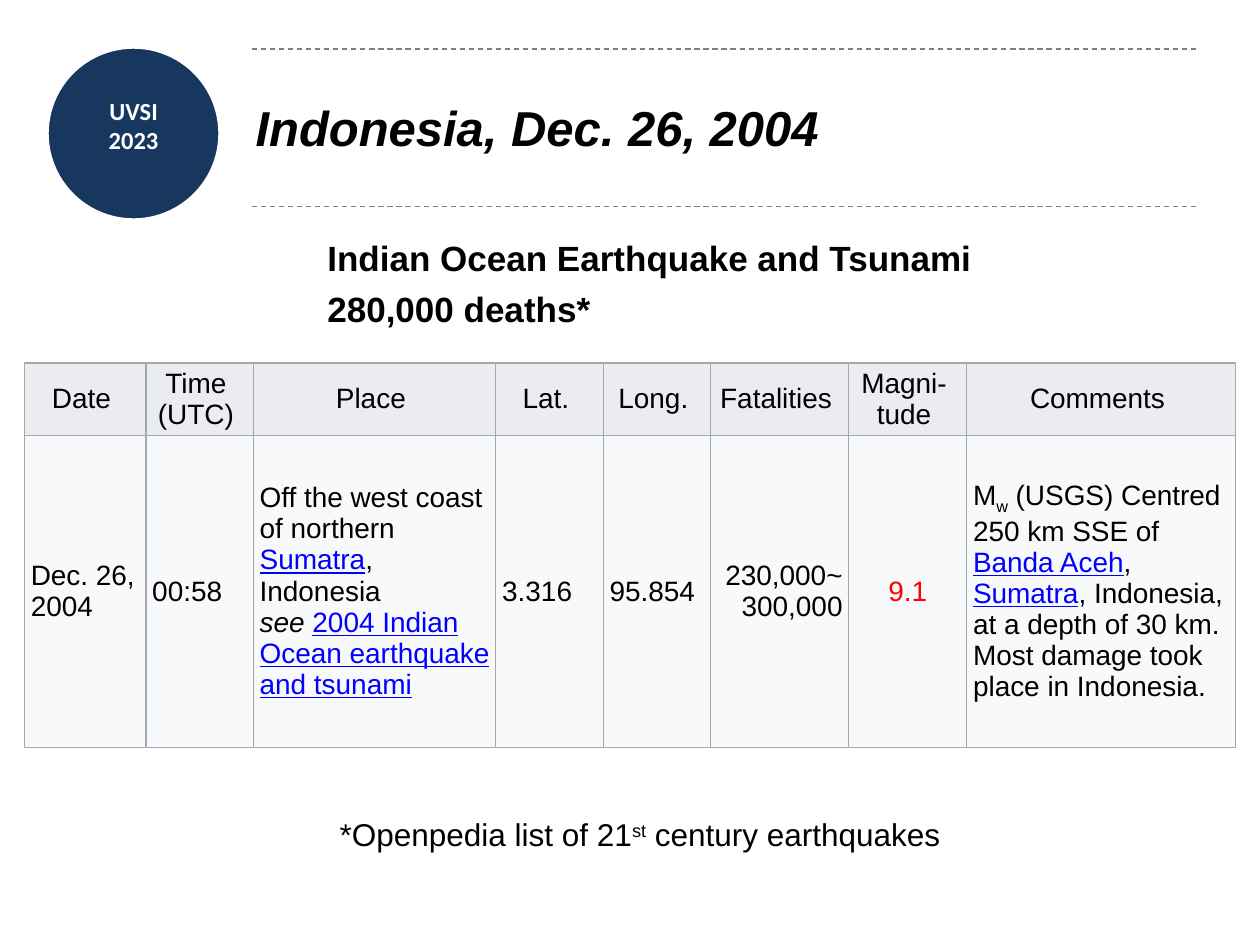
import pptx
import pptx.dml.color
import pptx.enum.dml
import pptx.enum.shapes
import pptx.enum.text
import pptx.oxml
import pptx.oxml.ns
import pptx.util

Pt = pptx.util.Pt
ALIGN = pptx.enum.text.PP_ALIGN
MIDDLE = pptx.enum.text.MSO_ANCHOR.MIDDLE

BLACK, WHITE, LINK_BLUE, RED = "000000", "FFFFFF", "0000FF", "FF0000"
NAVY, RULE_GRAY = "17375E", "808080"
HEADER_FILL, BODY_FILL, BORDER = "EAECF0", "F8F9FA", "A2A9B1"

LINK = {"color": LINK_BLUE, "underline": True}
COLUMN_WIDTHS = [69.4, 61.4, 138.6, 61.4, 61.4, 78.9, 67.4, 153.7]
ROW_HEIGHTS = [38.9, 178.6]
HEADERS = ["Date", "Time (UTC)", "Place", "Lat.", "Long.", "Fatalities", "Magni-tude", "Comments"]
# Each entry: alignment and runs of (text, format).
EARTHQUAKE = [
    (ALIGN.LEFT, [("Dec. 26, 2004", {})]),
    (ALIGN.LEFT, [("00:58", {})]),
    (ALIGN.LEFT, [
        ("Off the west coast of northern ", {}), ("Sumatra", LINK), (", Indonesia\n", {}),
        ("see ", {"italic": True}), ("2004 Indian Ocean earthquake and tsunami", LINK),
    ]),
    (ALIGN.LEFT, [("3.316", {})]),
    (ALIGN.LEFT, [("95.854", {})]),
    (ALIGN.RIGHT, [("230,000~\n300,000", {})]),
    (ALIGN.CENTER, [("9.1", {"color": RED})]),
    (ALIGN.LEFT, [
        ("M", {}), ("w", {"baseline": -25}), (" (USGS) Centred 250 km SSE of ", {}),
        ("Banda Aceh", LINK), (", ", {}), ("Sumatra", LINK),
        (", Indonesia, at a depth of 30 km. Most damage took place in Indonesia.", {}),
    ]),
]


def rgb(hex_color):
    return pptx.dml.color.RGBColor.from_string(hex_color)


def format_run(run, size, color=BLACK, font="Arial", bold=False, italic=False,
               underline=False, baseline=0):
    run.font.size, run.font.name = Pt(size), font
    run.font.bold, run.font.italic, run.font.underline = bold, italic, underline
    run.font.color.rgb = rgb(color)
    if baseline:
        run.font._element.set("baseline", str(baseline * 1000))


def add_runs(paragraph, runs, size):
    """Append (text, format) runs, turning newlines into line breaks."""
    for text, style in runs:
        for index, piece in enumerate(text.split("\n")):
            if index:
                paragraph.add_line_break()
            if piece:
                run = paragraph.add_run()
                run.text = piece
                format_run(run, size, **style)


def add_text_box(slide, left, top, width, height):
    frame = slide.shapes.add_textbox(Pt(left), Pt(top), Pt(width), Pt(height)).text_frame
    frame.word_wrap = True
    return frame


def add_text(slide, box, text, size, align=ALIGN.LEFT, space_before=0, **style):
    frame = add_text_box(slide, *box)
    frame.text = text
    for paragraph in frame.paragraphs:
        paragraph.alignment = align
        paragraph.space_before = Pt(space_before)
        for run in paragraph.runs:
            format_run(run, size, **style)
    return frame


def add_badge(slide):
    disc = slide.shapes.add_shape(pptx.enum.shapes.MSO_SHAPE.OVAL, Pt(26.6), Pt(26.6), Pt(99.4), Pt(99.4))
    disc.shadow.inherit = False
    disc.fill.solid()
    disc.fill.fore_color.rgb = rgb(NAVY)
    disc.line.color.rgb = rgb(WHITE)
    disc.line.width = Pt(2.5)
    label = add_text(slide, (31, 54.7, 90.7, 33.8), "UVSI\n2023", 14, ALIGN.CENTER,
                     color=WHITE, font="Calibri", bold=True)
    label.margin_left = label.margin_right = label.margin_top = label.margin_bottom = 0


def add_dashed_rule(slide, y):
    rule = slide.shapes.add_connector(pptx.enum.shapes.MSO_CONNECTOR.STRAIGHT, Pt(144), Pt(y), Pt(684), Pt(y))
    rule.line.color.rgb = rgb(RULE_GRAY)
    rule.line.width = Pt(0.75)
    rule.line.dash_style = pptx.enum.dml.MSO_LINE.DASH
    rule._element.spPr.append(pptx.oxml.parse_xml(
        f"<a:effectLst {pptx.oxml.ns.nsdecls('a')}/>"))


def set_borders(cell):
    properties = cell._tc.get_or_add_tcPr()
    for index, side in enumerate(("lnL", "lnR", "lnT", "lnB")):
        properties.insert(index, pptx.oxml.parse_xml(
            f'<a:{side} {pptx.oxml.ns.nsdecls("a")} w="{Pt(0.75)}">'
            f'<a:solidFill><a:srgbClr val="{BORDER}"/></a:solidFill></a:{side}>'))


def fill_cell(cell, runs, align, fill, right_margin):
    cell.fill.solid()
    cell.fill.fore_color.rgb = rgb(fill)
    set_borders(cell)
    cell.vertical_anchor = MIDDLE
    cell.margin_left, cell.margin_right = Pt(3.6), Pt(right_margin)
    cell.margin_top = cell.margin_bottom = Pt(1.44)
    paragraph = cell.text_frame.paragraphs[0]
    paragraph.alignment = align
    add_runs(paragraph, runs, 16)


def add_earthquake_table(slide):
    table = slide.shapes.add_table(
        len(ROW_HEIGHTS), len(COLUMN_WIDTHS), Pt(14), Pt(207.4),
        Pt(sum(COLUMN_WIDTHS)), Pt(sum(ROW_HEIGHTS))).table
    for column, width in zip(table.columns, COLUMN_WIDTHS):
        column.width = Pt(width)
    for row, height in zip(table.rows, ROW_HEIGHTS):
        row.height = Pt(height)
    for index, (header, (align, runs)) in enumerate(zip(HEADERS, EARTHQUAKE)):
        fill_cell(table.cell(0, index), [(header, {})], ALIGN.CENTER, HEADER_FILL, 7.9)
        fill_cell(table.cell(1, index), runs, align, BODY_FILL, 3.6)


def add_footnote(slide):
    paragraph = add_text_box(slide, 54, 462.2, 623.5, 28.8).paragraphs[0]
    paragraph.alignment = ALIGN.CENTER
    add_runs(paragraph, [("*Openpedia list of 21", {}), ("st", {"baseline": 30}),
                         (" century earthquakes", {})], 18)


def main():
    presentation = pptx.Presentation()
    presentation.slide_width, presentation.slide_height = Pt(720), Pt(540)
    slide = presentation.slides.add_slide(presentation.slide_layouts[6])

    add_badge(slide)
    for y in (28, 118):
        add_dashed_rule(slide, y)
    title = add_text(slide, (139, 27.4, 540, 90), "Indonesia, Dec. 26, 2004", 28, bold=True, italic=True)
    title.vertical_anchor = MIDDLE
    add_text(slide, (180, 131.8, 540, 64),
             "Indian Ocean Earthquake and Tsunami\n280,000 deaths*", 20, space_before=5, bold=True)
    add_earthquake_table(slide)
    add_footnote(slide)

    presentation.save("out.pptx")


if __name__ == "__main__":
    main()
